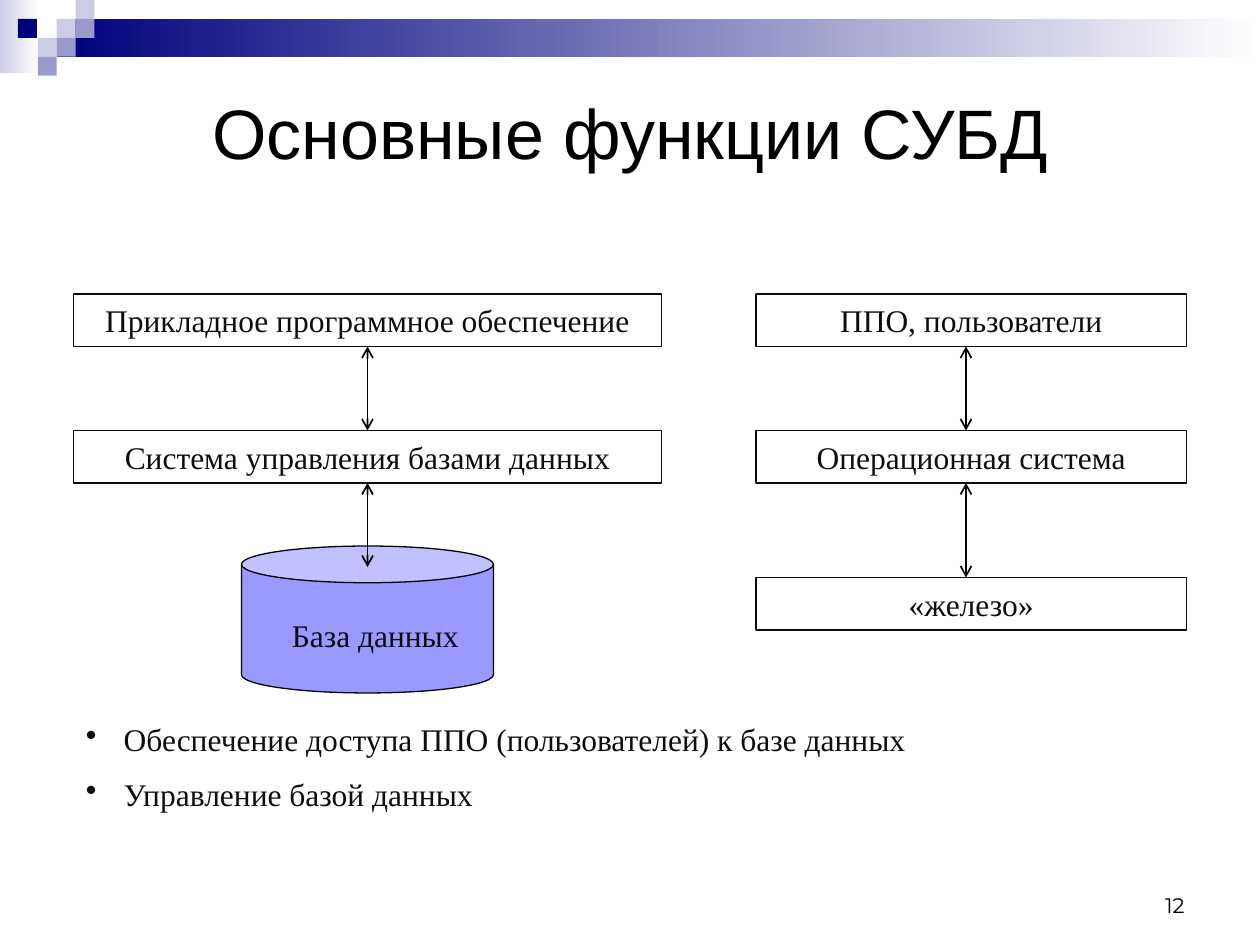
from lxml import etree
from pptx import Presentation, util as u
from pptx.dml.color import RGBColor
from pptx.enum import shapes, text
from pptx.oxml.ns import qn

COLORS = {"navy": "00007D", "pale": "CCCCE6", "lilac": "9999CC", "white": "FFFFFF",
          "can": "9999FF", "ink": "0D0D11", "black": "000000"}
RGB = {name: RGBColor.from_string(value) for name, value in COLORS.items()}
CELL = u.Inches(10) // 120  # the slide is 120 columns by 90 rows
TILE = 1.8                  # side of a corner square, in cells
BOX_HEIGHT = 5

presentation = Presentation()
presentation.slide_width, presentation.slide_height = 120 * CELL, 90 * CELL
slide = presentation.slides.add_slide(presentation.slide_layouts[6])


def add_block(kind, column, row, width, height, fill=None, line=None):
    """Add a preset shape on the grid; a tuple of two fills makes a gradient."""
    shape = slide.shapes.add_shape(
        kind, *(round(cells * CELL) for cells in (column, row, width, height)))
    shape.shadow.inherit = False
    if isinstance(fill, tuple):
        shape.fill.gradient()
        shape.fill.gradient_angle = 0
        for stop, name in zip(shape.fill.gradient_stops, fill):
            stop.color.rgb = RGB[name]
    elif fill:
        shape.fill.solid()
        shape.fill.fore_color.rgb = RGB[fill]
    else:
        shape.fill.background()
    if line:
        shape.line.color.rgb = RGB[line]
        shape.line.width = u.Pt(0.75)
    else:
        shape.line.fill.background()
    return shape


def write(shape, lines, size=18, font="Times New Roman", color="ink",
          align=text.PP_ALIGN.CENTER, anchor=text.MSO_ANCHOR.MIDDLE):
    frame = shape.text_frame
    frame.word_wrap = True
    frame.vertical_anchor = anchor
    frame.text = "\n".join(lines)
    for paragraph in frame.paragraphs:
        paragraph.alignment = align
        paragraph.font.size = u.Pt(size)
        paragraph.font.name = font
        paragraph.font.color.rgb = RGB[color]
    return frame


# Corner ornament
RECTANGLE = shapes.MSO_SHAPE.RECTANGLE
add_block(RECTANGLE, 0, 0, 3.7, 7, ("pale", "white"))
add_block(RECTANGLE, 3 * TILE, TILE, 120 - 3 * TILE, 2 * TILE, ("navy", "white"))
for column, row, color in [(3, 1, "pale"), (4, 0, "pale"), (4, 1, "lilac"), (2, 2, "pale"),
                           (0.95, 1, "navy"), (3, 2, "lilac"), (2, 3, "lilac")]:
    add_block(RECTANGLE, column * TILE, row * TILE, TILE, TILE, color)

title = slide.shapes.add_textbox(6 * CELL, 6 * CELL, 108 * CELL, 13 * CELL)
write(title, ["Основные функции СУБД"], 40, "Arial", "black")

# Layers of the two stacks
boxes = {}
for column, row, width, label in [
        (7, 28, 56, "Прикладное программное обеспечение"),
        (7, 41, 56, "Система управления базами данных"),
        (72, 28, 41, "ППО, пользователи"),
        (72, 41, 41, "Операционная система"),
        (72, 55, 41, "«железо»")]:
    box = add_block(RECTANGLE, column, row, width, BOX_HEIGHT, line="ink")
    write(box, [label])
    boxes[column, row] = box

database = add_block(shapes.MSO_SHAPE.CAN, 23, 52, 24, 14, "can", "black")
database.adjustments[0] = 0.25
label = slide.shapes.add_textbox(26 * CELL, 58 * CELL, 19.5 * CELL, BOX_HEIGHT * CELL)
write(label, ["База данных"])

# Two-way arrows; the left ones meet the middle of the DBMS box
dbms = boxes[7, 41]
for column, top, bottom, begin, end in [
        (35, 33, 41, None, dbms), (35, 46, 54, dbms, None),
        (92, 33, 41, None, None), (92, 46, 55, None, None)]:
    arrow = slide.shapes.add_connector(
        shapes.MSO_CONNECTOR.STRAIGHT,
        column * CELL, top * CELL, column * CELL, bottom * CELL)
    if begin:
        arrow.begin_connect(begin, 2)
    if end:
        arrow.end_connect(end, 0)
    arrow.line.color.rgb = RGB["black"]
    arrow.line.width = u.Pt(1)
    for tip in ("a:headEnd", "a:tailEnd"):
        etree.SubElement(arrow.line._get_or_add_ln(), qn(tip), type="arrow")
    etree.SubElement(arrow._element.spPr, qn("a:effectLst"))

# Functions of the DBMS
functions = slide.shapes.add_textbox(7 * CELL, 68 * CELL, 100 * CELL, 10 * CELL)
frame = write(functions, ["Обеспечение доступа ППО (пользователей) к базе данных",
                          "Управление базой данных"],
              align=text.PP_ALIGN.LEFT, anchor=text.MSO_ANCHOR.TOP)
for paragraph in frame.paragraphs:
    properties = paragraph._p.get_or_add_pPr()
    properties.set("marL", str(u.Inches(0.3)))
    properties.set("indent", str(-u.Inches(0.3)))
    bullet = etree.Element(qn("a:buChar"), char="•")
    properties.find(qn("a:defRPr")).addprevious(bullet)
frame.paragraphs[1].space_before = u.Pt(10)

number = slide.shapes.add_textbox(86 * CELL, 82 * CELL, 28 * CELL, 6 * CELL)
write(number, ["12"], 12, "Montserrat", "black", text.PP_ALIGN.RIGHT, text.MSO_ANCHOR.BOTTOM)

presentation.save("out.pptx")
